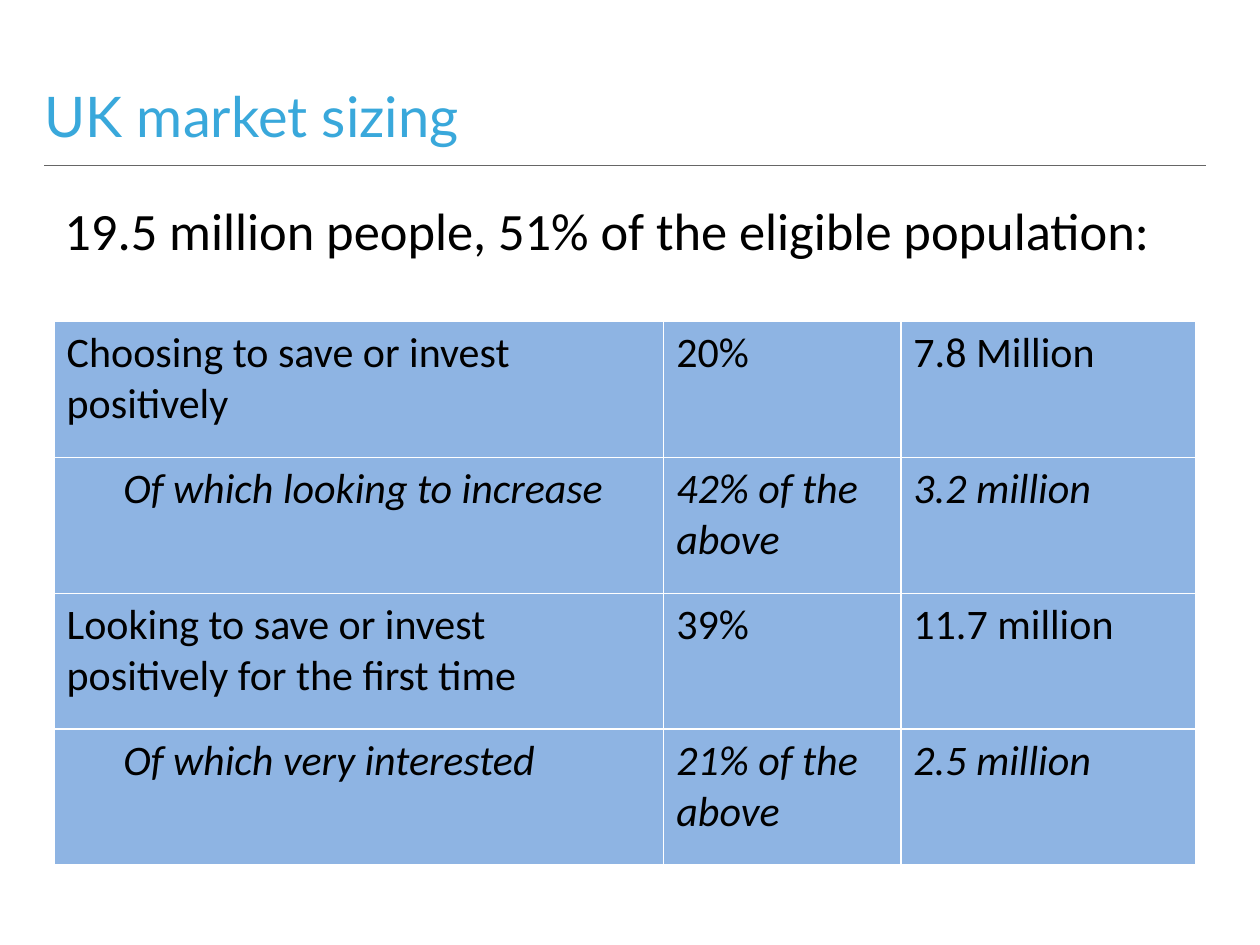
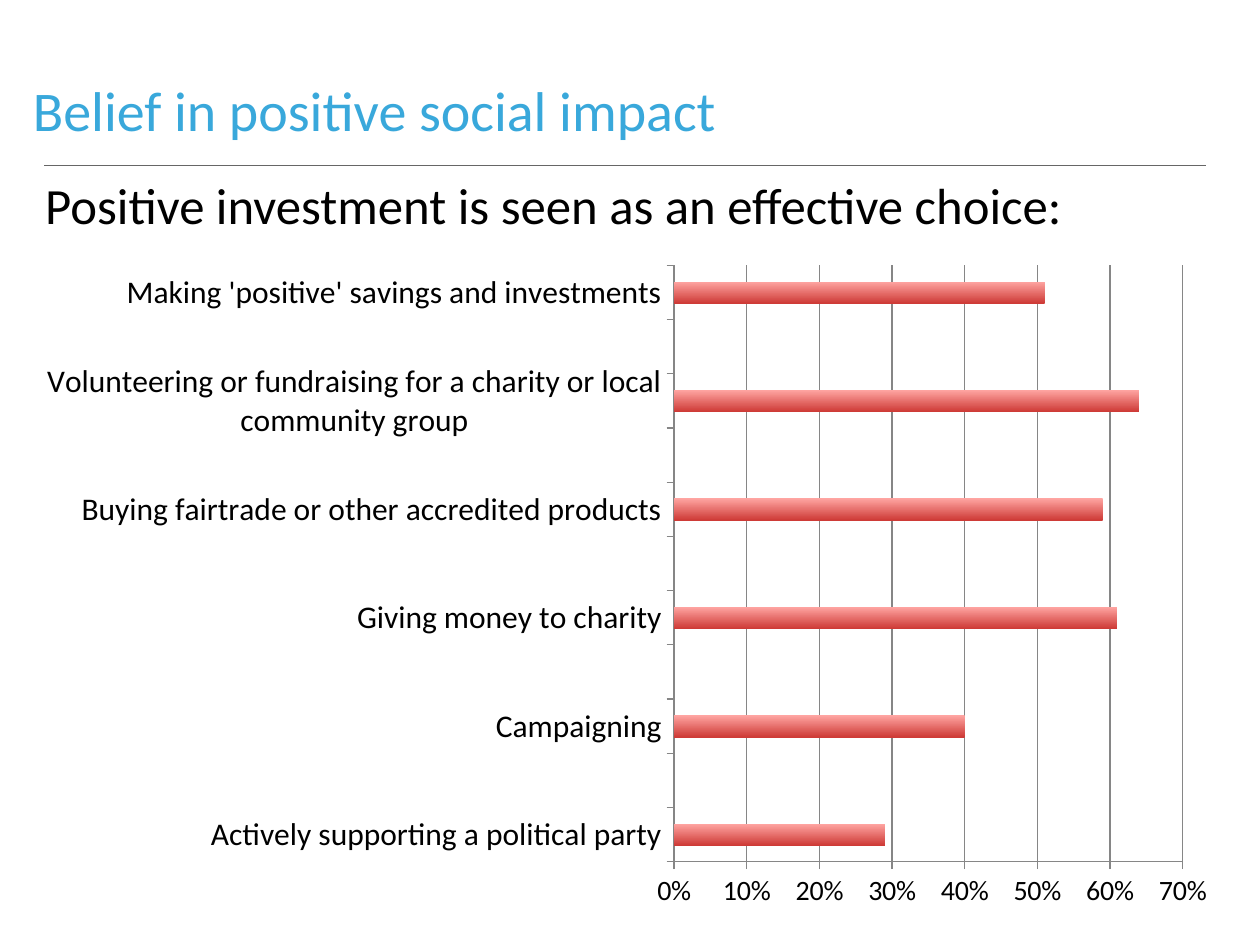
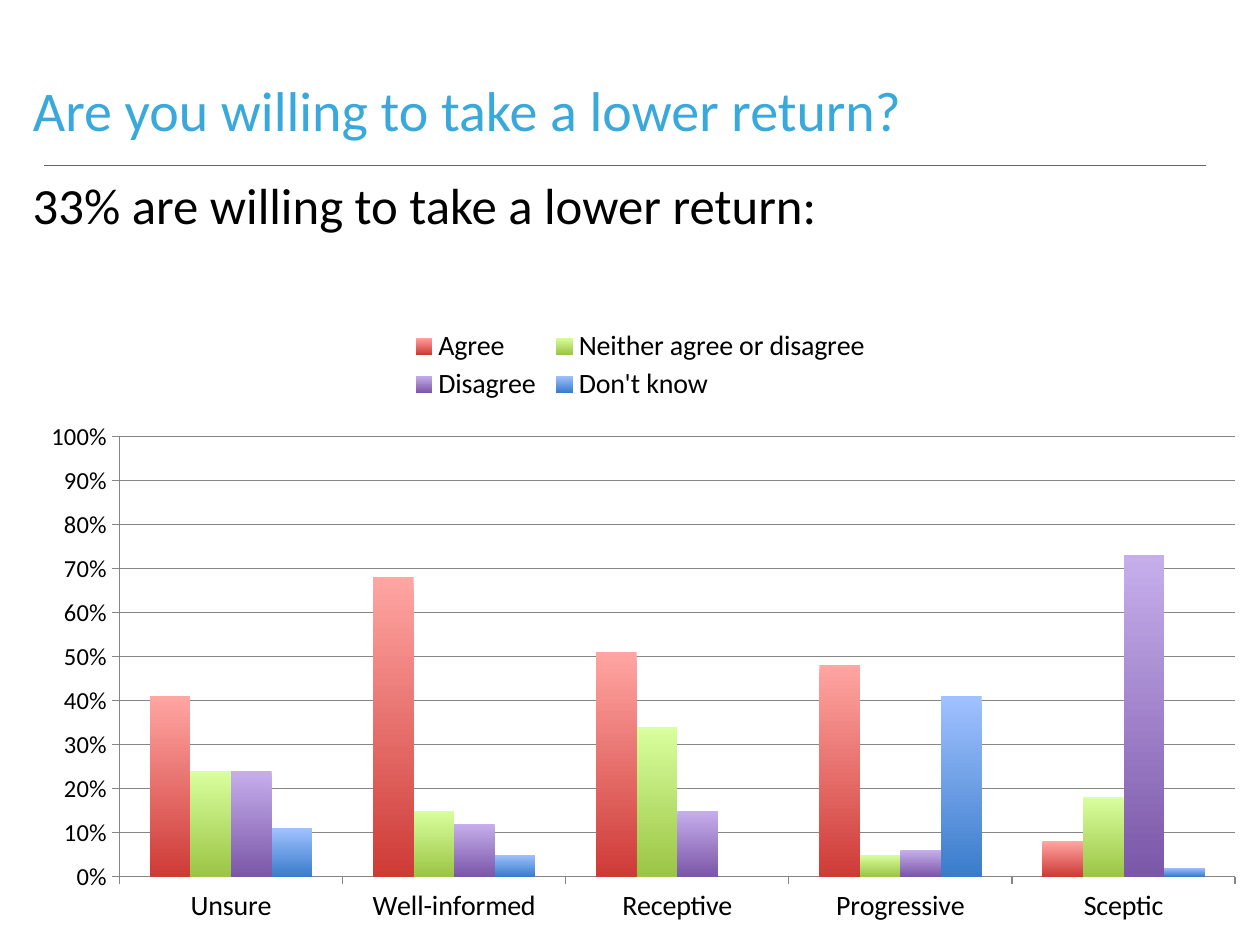
"""Build three slides on the UK market for positive investment."""
from lxml import etree
from pptx import Presentation
from pptx import util as u
from pptx.chart.data import CategoryChartData
from pptx.dml.color import RGBColor
from pptx.enum import chart as charts, shapes, text
from pptx.oxml import parse_xml
from pptx.oxml.ns import nsdecls, qn

BLACK, WHITE, GREY, AXIS_GREY = "000000", "FFFFFF", "666666", "868686"
TITLE_BLUE, CELL_BLUE = "39A8DB", "8EB4E3"
RED, GREEN = ("FFA5A2", "CE3B37"), ("D9FF9E", "9BC545")
PURPLE, BLUE = ("C6AEEC", "7B57A8"), ("A0C1FF", "3A7CCB")


def rgb(hex_colour):
    return RGBColor.from_string(hex_colour)


def box(left, top, width, height):
    return [u.Cm(length) for length in (left, top, width, height)]


def write(frame, content, size, font="Calibri", colour=BLACK, italic=False, after=0):
    paragraph = frame.paragraphs[0]
    paragraph.alignment = text.PP_ALIGN.LEFT
    paragraph.space_after = u.Pt(after)
    run = paragraph.add_run()
    run.text = content
    run.font.size = u.Pt(size)
    run.font.name = font
    run.font.italic = italic
    run.font.color.rgb = rgb(colour)


def border(cell):
    properties = cell._tc.get_or_add_tcPr()
    for position, side in enumerate("LRTB"):
        properties.insert(position, parse_xml(
            f'<a:ln{side} {nsdecls("a")} w="12700"><a:solidFill>'
            f'<a:srgbClr val="{WHITE}"/></a:solidFill></a:ln{side}>'))


def place(element, position, inner=False):
    layout = element.find(qn("c:layout"))
    if layout is None:
        layout = etree.Element(qn("c:layout"))
        following = element.find(qn("c:overlay"))
        if following is None:
            element.insert(0, layout)
        else:
            following.addprevious(layout)
    manual = etree.SubElement(layout, qn("c:manualLayout"))
    settings = [("layoutTarget", "inner")] if inner else []
    settings += [("xMode", "edge"), ("yMode", "edge"), *zip("xywh", position)]
    for name, value in settings:
        etree.SubElement(manual, qn(f"c:{name}")).set("val", str(value))


class Deck:
    """Hold the shared style and the current slide."""

    def __init__(self):
        self.presentation = Presentation()
        self.presentation.slide_width = u.Cm(25.4)
        self.presentation.slide_height = u.Cm(19.05)
        self.slide = None

    def add_slide(self, title, left=0.41, top=1.19, font="Calibri",
                  anchor=text.MSO_ANCHOR.MIDDLE):
        self.slide = self.presentation.slides.add_slide(self.presentation.slide_layouts[5])
        self.add_rule()
        shape = self.slide.shapes.title
        shape.left, shape.top, shape.width, shape.height = box(left, top, 22.86, 2)
        shape.text_frame.vertical_anchor = anchor
        write(shape.text_frame, title, 32, font, TITLE_BLUE)

    def add_rule(self):
        rule = self.slide.shapes.add_connector(
            shapes.MSO_CONNECTOR.STRAIGHT, *box(0.89, 3.33, 24.31, 3.33))
        rule.line.color.rgb = rgb(GREY)
        rule.line.width = u.Pt(0.5)
        etree.SubElement(rule._element.spPr, qn("a:effectLst"))

    def add_lead(self, content, left, top, width, size=29, indent=0.25):
        shape = self.slide.shapes.add_textbox(*box(left, top, width, 1.5))
        shape.text_frame.word_wrap = True
        shape.text_frame.margin_left = u.Cm(indent)
        write(shape.text_frame, content, size, after=12)

    def add_table(self, rows, widths, left, top, row_height):
        table = self.slide.shapes.add_table(
            len(rows), len(widths),
            *box(left, top, sum(widths), row_height * len(rows))).table
        table.first_row = table.horz_banding = False
        for column, width in zip(table.columns, widths):
            column.width = u.Cm(width)
        for row_index, (is_detail, *contents) in enumerate(rows):
            for column_index, content in enumerate(contents):
                cell = table.cell(row_index, column_index)
                cell.fill.solid()
                cell.fill.fore_color.rgb = rgb(CELL_BLUE)
                if is_detail and column_index == 0:
                    cell.margin_left = u.Cm(1.4)
                write(cell.text_frame, content, 24, italic=is_detail)
                border(cell)

    def add_chart(self, kind, place_on_slide, categories, series, plot_area,
                  category_size, value_size, maximum):
        data = CategoryChartData(number_format="0%")
        data.categories = categories
        for name, values, _ in series:
            data.add_series(name, values)
        chart = self.slide.shapes.add_chart(kind, *box(*place_on_slide), data).chart
        chart.has_title = chart.has_legend = False
        chart.font.name = "Calibri"
        chart.font.size = u.Pt(10)
        chart.font.color.rgb = rgb(BLACK)
        plot = chart.plots[0]
        plot.gap_width, plot.overlap, plot.vary_by_categories = 150, 0, False
        for drawn, (_, _, colours) in zip(plot.series, series):
            fill = drawn.format.fill
            fill.gradient()
            fill.gradient_angle = 270
            for stop, colour in zip(fill.gradient_stops, colours):
                stop.color.rgb = rgb(colour)
        axes = (chart.category_axis, category_size), (chart.value_axis, value_size)
        for axis, size in axes:
            axis.tick_labels.font.size = u.Pt(size)
            axis.major_tick_mark = charts.XL_TICK_MARK.OUTSIDE
            axis.format.line.color.rgb = rgb(AXIS_GREY)
        value_axis = chart.value_axis
        value_axis.minimum_scale, value_axis.maximum_scale = 0, maximum
        value_axis.major_unit = 0.1
        value_axis.tick_labels.number_format = "0%"
        value_axis.tick_labels.number_format_is_linked = False
        value_axis.major_gridlines.format.line.color.rgb = rgb(AXIS_GREY)
        place(chart._chartSpace.chart.plotArea, plot_area, inner=True)
        return chart

    def add_legend(self, chart, position):
        chart.has_legend = True
        chart.legend.position = charts.XL_LEGEND_POSITION.TOP
        chart.legend.include_in_layout = False
        chart.legend.font.size = u.Pt(16)
        place(chart.legend._element, position)


def main():
    deck = Deck()

    deck.add_slide("UK market sizing", 0.64, 1.52, "Lato", text.MSO_ANCHOR.TOP)
    deck.add_lead("19.5 million people, 51% of the eligible population:",
                  0.81, 3.86, 23.6, size=30, indent=0.49)
    deck.add_table([
        (False, "Choosing to save or invest positively", "20%", "7.8 Million"),
        (True, "Of which looking to increase", "42% of the above", "3.2 million"),
        (False, "Looking to save or invest positively for the first time", "39%",
         "11.7 million"),
        (True, "Of which very interested", "21% of the above", "2.5 million"),
    ], widths=(12.29, 4.78, 5.94), left=1.09, top=6.48, row_height=2.74)

    deck.add_slide("Belief in positive social impact")
    deck.add_lead("Positive investment is seen as an effective choice:", 0.66, 3.38, 23.7)
    beliefs = [
        ("Actively supporting a political party", 0.29),
        ("Campaigning", 0.4),
        ("Giving money to charity", 0.61),
        ("Buying fairtrade or other accredited products", 0.59),
        ("Volunteering or fundraising for a charity or local community group", 0.64),
        ("Making 'positive' savings and investments", 0.51),
    ]
    spaced = [entry for belief in beliefs for entry in (belief, ("", None))][:-1]
    categories, values = zip(*spaced)
    deck.add_chart(charts.XL_CHART_TYPE.BAR_CLUSTERED, (0.41, 5.08, 24.41, 13.51),
                   categories, [("Series 1", values, RED)], (0.54, 0.02, 0.42, 0.89),
                   category_size=18, value_size=16, maximum=0.7)

    deck.add_slide("Are you willing to take a lower return?")
    deck.add_lead("33% are willing to take a lower return:", 0.41, 3.38, 24.99)
    answers = [
        ("Agree", (0.41, 0.68, 0.51, 0.48, 0.08), RED),
        ("Neither agree or disagree", (0.24, 0.15, 0.34, 0.05, 0.18), GREEN),
        ("Disagree", (0.24, 0.12, 0.15, 0.06, 0.73), PURPLE),
        ("Don't know", (0.11, 0.05, 0, 0.41, 0.02), BLUE),
    ]
    chart = deck.add_chart(
        charts.XL_CHART_TYPE.COLUMN_CLUSTERED, (0.41, 6.3, 24.99, 12.5),
        ("Unsure", "Well-informed", "Receptive", "Progressive", "Sceptic"),
        answers, (0.08, 0.2, 0.9, 0.71), category_size=16, value_size=14, maximum=1)
    deck.add_legend(chart, (0.31, 0.02, 0.38, 0.13))

    deck.presentation.save("out.pptx")


if __name__ == "__main__":
    main()
